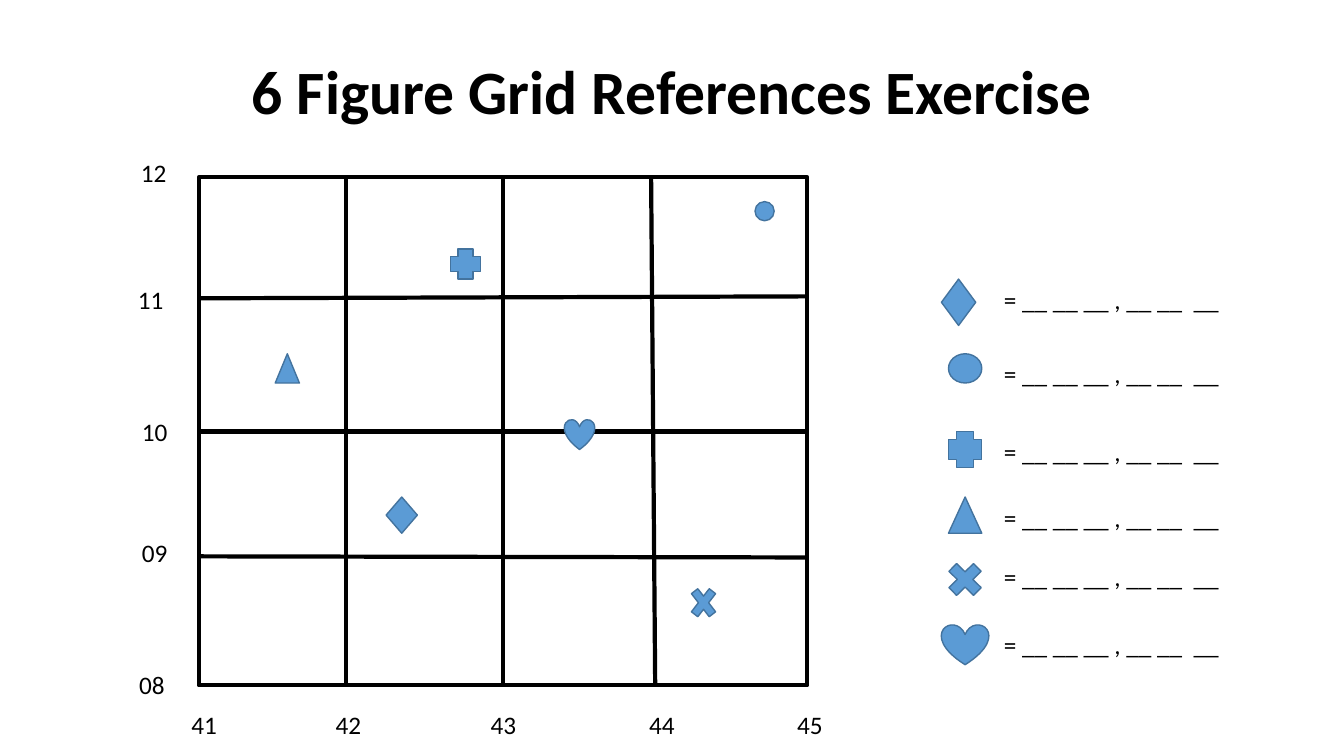
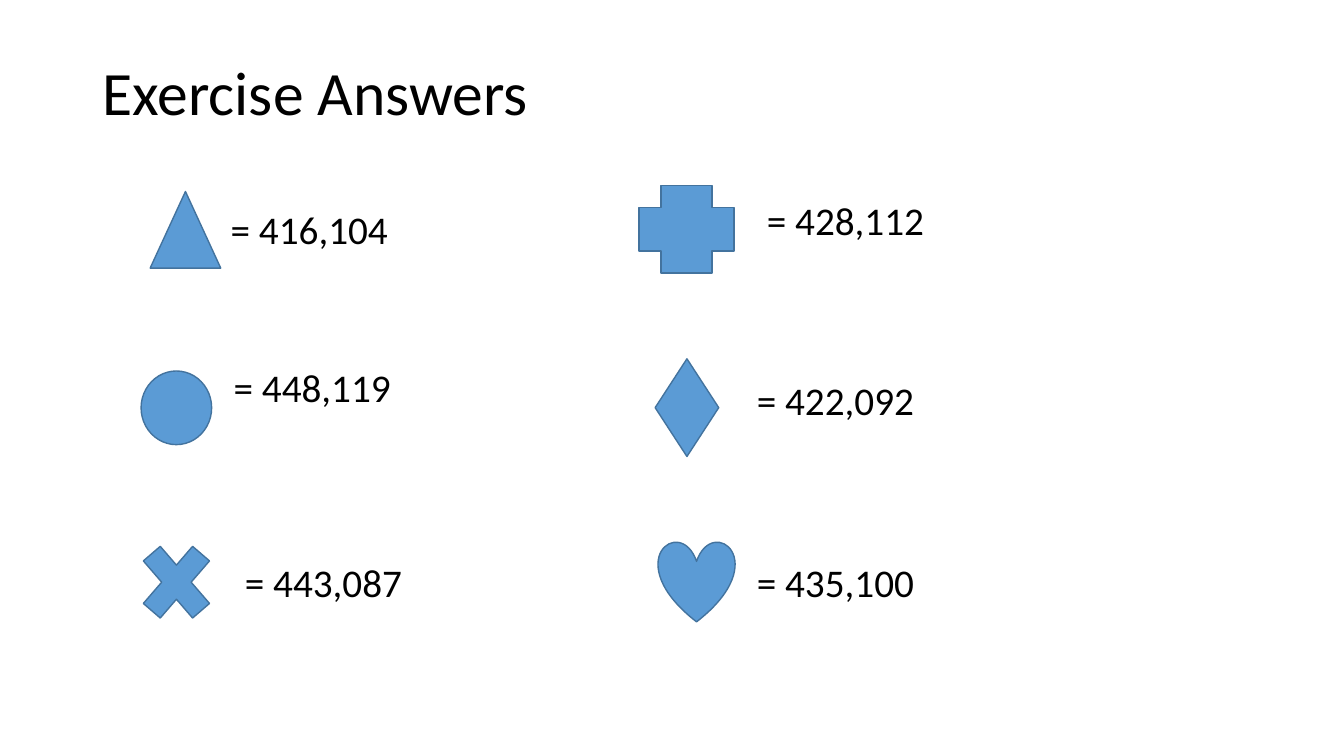
from pptx import Presentation
from pptx.dml.color import RGBColor
from pptx.enum.shapes import MSO_CONNECTOR, MSO_SHAPE as Preset
from pptx.enum.text import MSO_ANCHOR as Anchor, PP_ALIGN as Align
from pptx.oxml.ns import qn
from pptx.util import Pt

FONT = "Calibri"
BLACK, BLUE, BLUE_EDGE = "000000", "5B9BD5", "43739E"

# Symbols: preset shape on the map and on the answer slide
MAP_SYMBOLS = {
    "diamond": Preset.DIAMOND,
    "circle": Preset.OVAL,
    "plus": Preset.CROSS,
    "triangle": Preset.ISOSCELES_TRIANGLE,
    "times": Preset.MATH_MULTIPLY,
    "heart": Preset.HEART,
}
ANSWER_SYMBOLS = MAP_SYMBOLS | {
    "diamond": Preset.FLOWCHART_DECISION,
    "circle": Preset.FLOWCHART_CONNECTOR,
    "triangle": Preset.FLOWCHART_EXTRACT,
}

# Map: frame, inner lines (start and end differ where a line slants)
LEFT, TOP, RIGHT, BOTTOM = 142, 126.7, 576.7, 489.6
EASTING_LINES = [(247, 247), (359.3, 359.3), (465.1, 468)]
NORTHING_LINES = [(213.1, 211.7), (308.2, 308.2), (397.4, 398.2)]
NORTHINGS = [("12", 93.6, 108.7), ("11", 91.4, 199.4), ("10", 94.3, 293.8),
             ("09", 94.3, 380.2), ("08", 92.2, 474.5)]
EASTINGS = [("41", 129.6), ("42", 232.6), ("43", 343.4), ("44", 456.5), ("45", 562.3)]
EASTING_LABEL_TOP = 503.3

# Symbol, left, top, width, height
MAP_MARKS = [
    ("circle", 539.3, 144, 13.7, 13.7),
    ("diamond", 275.8, 355, 22.3, 25.9),
    ("triangle", 196.6, 252.7, 17.3, 20.9),
    ("times", 490.3, 414.7, 24.5, 31.7),
    ("plus", 321.8, 177.8, 21.6, 21.6),
    ("heart", 403.2, 299.5, 21.6, 21.6),
]
KEY_MARKS = [
    ("diamond", 672.5, 199.4, 24.5, 33.1),
    ("circle", 677.5, 252.7, 23.8, 20.9),
    ("plus", 677.5, 308.2, 23.8, 25.9),
    ("triangle", 677.5, 355, 23.8, 25.9),
    ("times", 672.5, 397.4, 33.8, 33.1),
    ("heart", 672.5, 446, 33.8, 28.8),
]
KEY_BLANKS, KEY_TEXT_LEFT = "= __ __ __ , __ __  __", 709.9

# Symbol and its box, then the answer and its left and top
ANSWERS = [
    (("triangle", 107.3, 136.8, 50.4, 54.7), ("= 416,104", 157.7, 143.3)),
    (("circle", 100.8, 265, 50.4, 52.6), ("= 448,119", 159.8, 256.3)),
    (("times", 92.2, 376.6, 67.7, 78.5), ("= 443,087", 167.8, 395.3)),
    (("plus", 456.5, 132.5, 67.7, 62.6), ("= 428,112", 540.7, 136.8)),
    (("diamond", 468, 256.3, 45.4, 69.8), ("= 422,092", 533.5, 265)),
    (("heart", 470.2, 386.6, 54.7, 57.6), ("= 435,100", 533.5, 395.3)),
]


def color(code):
    return RGBColor.from_string(code)


def add_text(slide, text, left, top, width, height=29, *, size=18, bold=False,
             align=Align.LEFT, anchor=Anchor.TOP, spacing=1.0):
    frame = slide.shapes.add_textbox(Pt(left), Pt(top), Pt(width), Pt(height)).text_frame
    frame.word_wrap = True
    frame.vertical_anchor = anchor
    line = frame.paragraphs[0]
    line.alignment, line.line_spacing = align, spacing
    run = line.add_run()
    run.text = text
    run.font.name, run.font.size, run.font.bold = FONT, Pt(size), bold
    run.font.color.rgb = color(BLACK)


def add_title(slide, text, top, **style):
    add_text(slide, text, 66.2, top, 828, 80, size=44,
             anchor=Anchor.MIDDLE, spacing=0.9, **style)


def add_shape(slide, preset, left, top, width, height, fill=BLUE, edge=BLUE_EDGE, weight=1):
    shape = slide.shapes.add_shape(preset, Pt(left), Pt(top), Pt(width), Pt(height))
    shape.shadow.inherit = False
    if fill:
        shape.fill.solid()
        shape.fill.fore_color.rgb = color(fill)
    else:
        shape.fill.background()
    shape.line.color.rgb, shape.line.width = color(edge), Pt(weight)


def add_grid_line(slide, x1, y1, x2, y2):
    rule = slide.shapes.add_connector(MSO_CONNECTOR.STRAIGHT, Pt(x1), Pt(y1), Pt(x2), Pt(y2))
    rule.line.color.rgb, rule.line.width = color(BLACK), Pt(3)
    properties = rule._element.spPr
    properties.append(properties.makeelement(qn("a:effectLst"), {}))


def build_exercise(slide):
    add_title(slide, "6 Figure Grid References Exercise", 27.5, bold=True, align=Align.CENTER)

    # Grid
    add_shape(slide, Preset.RECTANGLE, LEFT, TOP, RIGHT - LEFT, BOTTOM - TOP,
              fill=None, edge=BLACK, weight=3)
    for start, end in EASTING_LINES:
        add_grid_line(slide, start, TOP, end, BOTTOM)
    for start, end in NORTHING_LINES:
        add_grid_line(slide, LEFT, start, RIGHT, end)

    # Axis numbers
    for number, left, top in NORTHINGS:
        add_text(slide, number, left, top, 38)
    for number, left in EASTINGS:
        add_text(slide, number, left, EASTING_LABEL_TOP, 38)

    # Marks on the map and the key to fill in
    for symbol, *box in MAP_MARKS + KEY_MARKS:
        add_shape(slide, MAP_SYMBOLS[symbol], *box)
    for _, _, top, _, _ in KEY_MARKS:
        add_text(slide, KEY_BLANKS, KEY_TEXT_LEFT, top, 184)


def build_answers(slide):
    add_title(slide, "Exercise Answers", 28.5)
    for (symbol, *box), (answer, left, top) in ANSWERS:
        add_shape(slide, ANSWER_SYMBOLS[symbol], *box)
        add_text(slide, answer, left, top, 160, 41, size=28)


def main():
    deck = Presentation()
    deck.slide_width, deck.slide_height = Pt(960), Pt(540)
    for build in (build_exercise, build_answers):
        build(deck.slides.add_slide(deck.slide_layouts[6]))
    deck.save("out.pptx")


if __name__ == "__main__":
    main()
